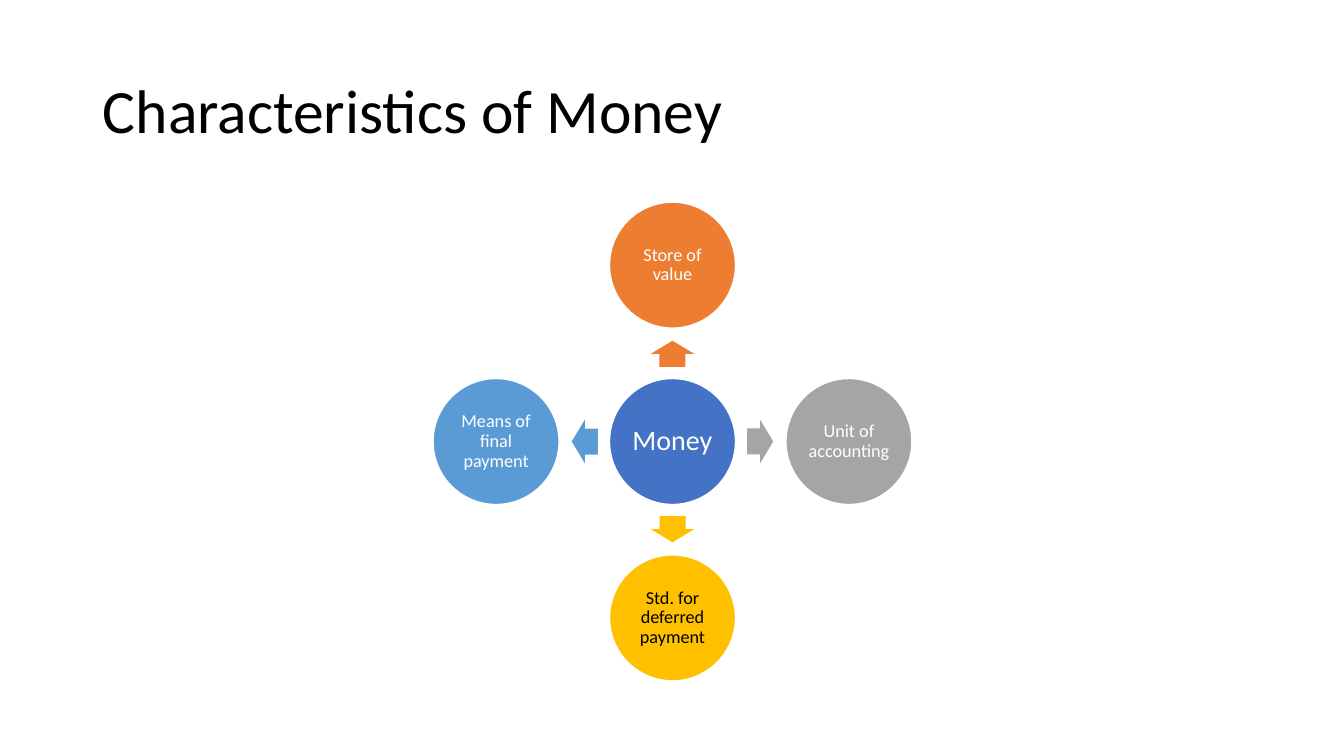
from dataclasses import dataclass
import math

from pptx import Presentation
from pptx import util as u
from pptx.dml.color import RGBColor
from pptx.enum import shapes, text


@dataclass(frozen=True)
class Theme:
    font: str = "Calibri"
    white: str = "FFFFFF"
    black: str = "000000"
    blue: str = "4472C4"
    orange: str = "ED7D31"
    gray: str = "A5A5A5"
    gold: str = "FFC000"
    sky: str = "5B9BD5"
    title_size: int = 44
    hub_size: int = 20
    spoke_size: int = 13


THEME = Theme()
CENTER_X, CENTER_Y = 6.67, 4.38
CIRCLE = 1.25
SPOKE_RADIUS = 1.75
ARROW_RADIUS = 0.87
ARROW_W, ARROW_H = 0.26, 0.43

# Label, fill, text colour and clockwise angle from the right
SPOKES = [
    ("Store of value", THEME.orange, THEME.white, 270),
    ("Unit of accounting", THEME.gray, THEME.white, 0),
    ("Std. for deferred payment", THEME.gold, THEME.black, 90),
    ("Means of final payment", THEME.sky, THEME.white, 180),
]


def write(tf, content, size, color, align=text.PP_ALIGN.CENTER, inset=None):
    tf.word_wrap = True
    tf.auto_size = text.MSO_AUTO_SIZE.NONE
    tf.vertical_anchor = text.MSO_ANCHOR.MIDDLE
    if inset is not None:
        tf.margin_left = tf.margin_right = u.Inches(inset)
        tf.margin_top = tf.margin_bottom = u.Inches(inset)
    p = tf.paragraphs[0]
    p.alignment = align
    p.line_spacing = 0.9
    r = p.add_run()
    r.text = content
    r.font.name = THEME.font
    r.font.size = u.Pt(size)
    r.font.color.rgb = RGBColor.from_string(color)


def add_title(s, content):
    sp = s.shapes.title
    sp.left, sp.top = u.Inches(0.92), u.Inches(0.4)
    sp.width, sp.height = u.Inches(11.5), u.Inches(1.45)
    write(sp.text_frame, content, THEME.title_size, THEME.black,
          align=text.PP_ALIGN.LEFT)


def add_centered(group, kind, x, y, w, h, fill):
    """Add a filled shape whose centre is at x, y."""
    sp = group.shapes.add_shape(kind, u.Inches(x - w / 2), u.Inches(y - h / 2),
                                u.Inches(w), u.Inches(h))
    sp.shadow.inherit = False
    sp.fill.solid()
    sp.fill.fore_color.rgb = RGBColor.from_string(fill)
    return sp


def add_circle(group, x, y, label, fill, size, color, inset=0.02):
    sp = add_centered(group, shapes.MSO_SHAPE.OVAL, x, y, CIRCLE, CIRCLE, fill)
    sp.line.color.rgb = RGBColor.from_string(THEME.white)
    sp.line.width = u.Pt(1)
    write(sp.text_frame, label, size, color, inset=inset)


def add_arrow(group, x, y, fill, angle):
    sp = add_centered(group, shapes.MSO_SHAPE.RIGHT_ARROW, x, y,
                      ARROW_W, ARROW_H, fill)
    sp.line.fill.background()
    sp.adjustments[0], sp.adjustments[1] = 0.6, 0.5
    sp.rotation = angle


def around_center(radius, angle):
    a = math.radians(angle)
    return CENTER_X + radius * math.cos(a), CENTER_Y + radius * math.sin(a)


def main():
    prs = Presentation()
    prs.slide_width, prs.slide_height = u.Inches(13.33), u.Inches(7.5)
    s = prs.slides.add_slide(prs.slide_layouts.get_by_name("Title Only"))
    add_title(s, "Characteristics of Money")

    diagram = s.shapes.add_group_shape()
    add_circle(diagram, CENTER_X, CENTER_Y, "Money", THEME.blue,
               THEME.hub_size, THEME.white, inset=0.03)
    for label, fill, color, angle in SPOKES:
        add_arrow(diagram, *around_center(ARROW_RADIUS, angle), fill, angle)
        add_circle(diagram, *around_center(SPOKE_RADIUS, angle), label, fill,
                   THEME.spoke_size, color)

    prs.save("out.pptx")


if __name__ == "__main__":
    main()
